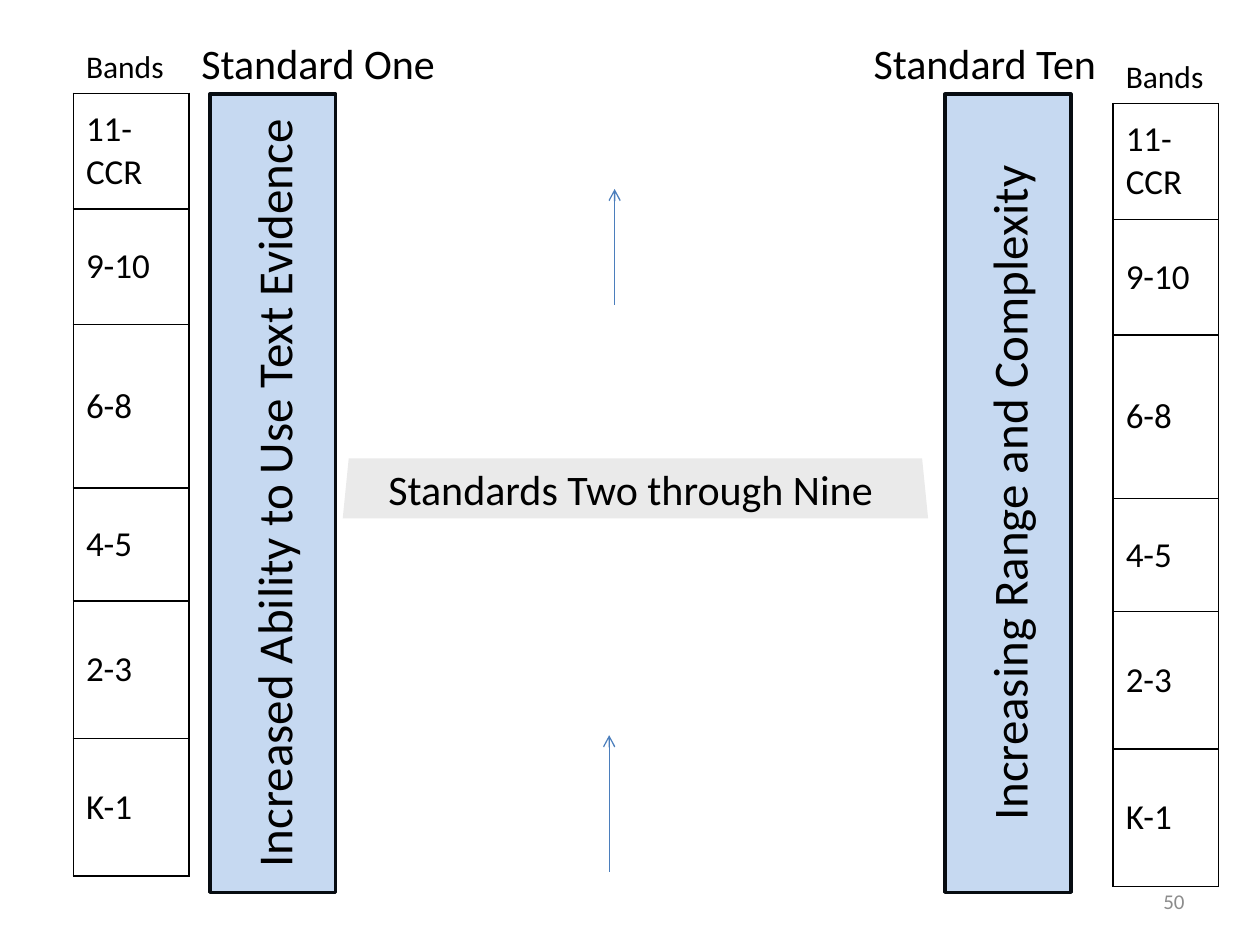
from lxml import etree
from pptx import Presentation
from pptx import util as u
from pptx.dml.color import RGBColor
from pptx.enum import shapes, text
from pptx.oxml.ns import qn

FONT = "Calibri"
BANDS = ["11-CCR", "9-10", "6-8", "4-5", "2-3", "K-1"]
ROW_HEIGHTS = [0.84, 2.33, 2.33, 3.3, 2.28, 2.77, 2.77]


def rgb(value):
    return RGBColor.from_string(value)


def box(left, top, width, height):
    return [u.Cm(v) for v in (left, top, width, height)]


def add_text(tf, words, size, color="000000", align=None, anchor=None):
    tf.word_wrap = True
    if anchor is not None:
        tf.vertical_anchor = anchor
    p = tf.paragraphs[0]
    p.alignment = align
    r = p.add_run()
    r.text = words
    r.font.name = FONT
    r.font.size = u.Pt(size)
    r.font.color.rgb = rgb(color)


def add_label(s, words, place, size, **style):
    sp = s.shapes.add_textbox(*box(*place))
    add_text(sp.text_frame, words, size, **style)


def add_panel(s, kind, place, fill, words, size, line=None):
    sp = s.shapes.add_shape(kind, *box(*place))
    sp.shadow.inherit = False
    sp.fill.solid()
    sp.fill.fore_color.rgb = rgb(fill)
    if line:
        sp.line.color.rgb = rgb(line)
        sp.line.width = u.Pt(2)
    else:
        sp.line.fill.background()
    add_text(sp.text_frame, words, size, align=text.PP_ALIGN.CENTER,
             anchor=text.MSO_ANCHOR.MIDDLE)
    return sp


def add_pillar(s, left, words):
    sp = add_panel(s, shapes.MSO_SHAPE.RECTANGLE, (left, 1.9, 2.54, 16.09),
                   "C6D9F1", words, 28, line="070C11")
    sp.text_frame._txBody.bodyPr.set("vert", "vert270")


def set_borders(cell, visible):
    tcPr = cell._tc.get_or_add_tcPr()
    for side in "LRTB":
        ln = etree.SubElement(tcPr, qn("a:ln" + side), w=str(u.Pt(1)))
        if side in visible:
            fill = etree.SubElement(ln, qn("a:solidFill"))
            etree.SubElement(fill, qn("a:srgbClr"), val="000000")
        else:
            etree.SubElement(ln, qn("a:noFill"))


def add_band_table(s, left, top, width):
    place = box(left, top, width, sum(ROW_HEIGHTS))
    table = s.shapes.add_table(len(ROW_HEIGHTS), 1, *place).table
    table.first_row = table.horz_banding = False
    for i, words in enumerate(["Bands"] + BANDS):
        table.rows[i].height = u.Cm(ROW_HEIGHTS[i])
        cell = table.cell(i, 0)
        # The heading has only a bottom rule
        set_borders(cell, "LRTB" if i else "B")
        cell.fill.background()
        add_text(cell.text_frame, words, 20 if i else 18)
        if i:
            cell.vertical_anchor = text.MSO_ANCHOR.MIDDLE


def add_up_arrow(s, x, bottom, top):
    ends = box(x, bottom, x, top)
    sp = s.shapes.add_connector(shapes.MSO_CONNECTOR.STRAIGHT, *ends)
    sp.line.color.rgb = rgb("4B7EBC")
    sp.line.width = u.Pt(0.75)
    etree.SubElement(sp.line._get_or_add_ln(), qn("a:tailEnd"), type="arrow")
    etree.SubElement(sp._element.spPr, qn("a:effectLst"))


def main():
    prs = Presentation()
    prs.slide_width, prs.slide_height = u.Cm(25.4), u.Cm(19.05)
    s = prs.slides.add_slide(prs.slide_layouts[6])

    # Left bands and both pillars around the middle bar
    add_band_table(s, 1.48, 0.85, 2.33)
    add_pillar(s, 4.23, "Increased Ability to Use Text Evidence")
    bar = add_panel(s, shapes.MSO_SHAPE.TRAPEZOID, (6.91, 9.24, 11.8, 1.21),
                    "EAEAEA", "Standards Two through Nine ", 24)
    bar.adjustments[0] = 0.1
    add_pillar(s, 19.05, "Increasing Range and Complexity")
    add_band_table(s, 22.44, 1.06, 2.12)

    # Pillar headings
    add_label(s, "Standard One", (3.81, 0.64, 6.35, 1.27), 24)
    add_label(s, "Standard Ten", (17.36, 0.64, 5.89, 1.27), 24)

    # Upward progress
    add_up_arrow(s, 12.39, 6.14, 3.81)
    add_up_arrow(s, 12.28, 17.57, 14.82)

    # Page number
    add_label(s, "50", (18.2, 17.66, 5.93, 1.01), 12, color="8C8C8C",
              align=text.PP_ALIGN.RIGHT, anchor=text.MSO_ANCHOR.MIDDLE)
    prs.save("out.pptx")


if __name__ == "__main__":
    main()
